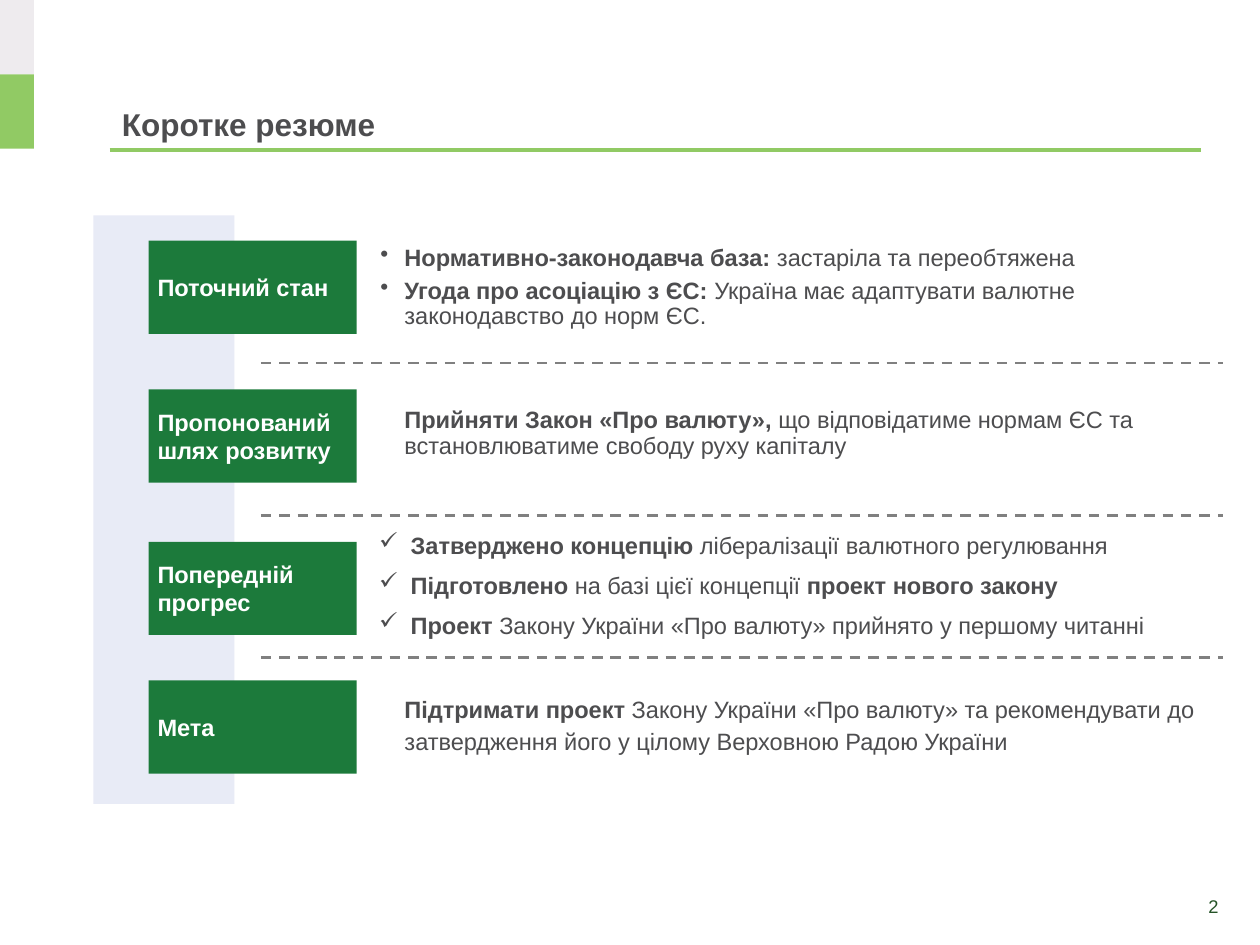
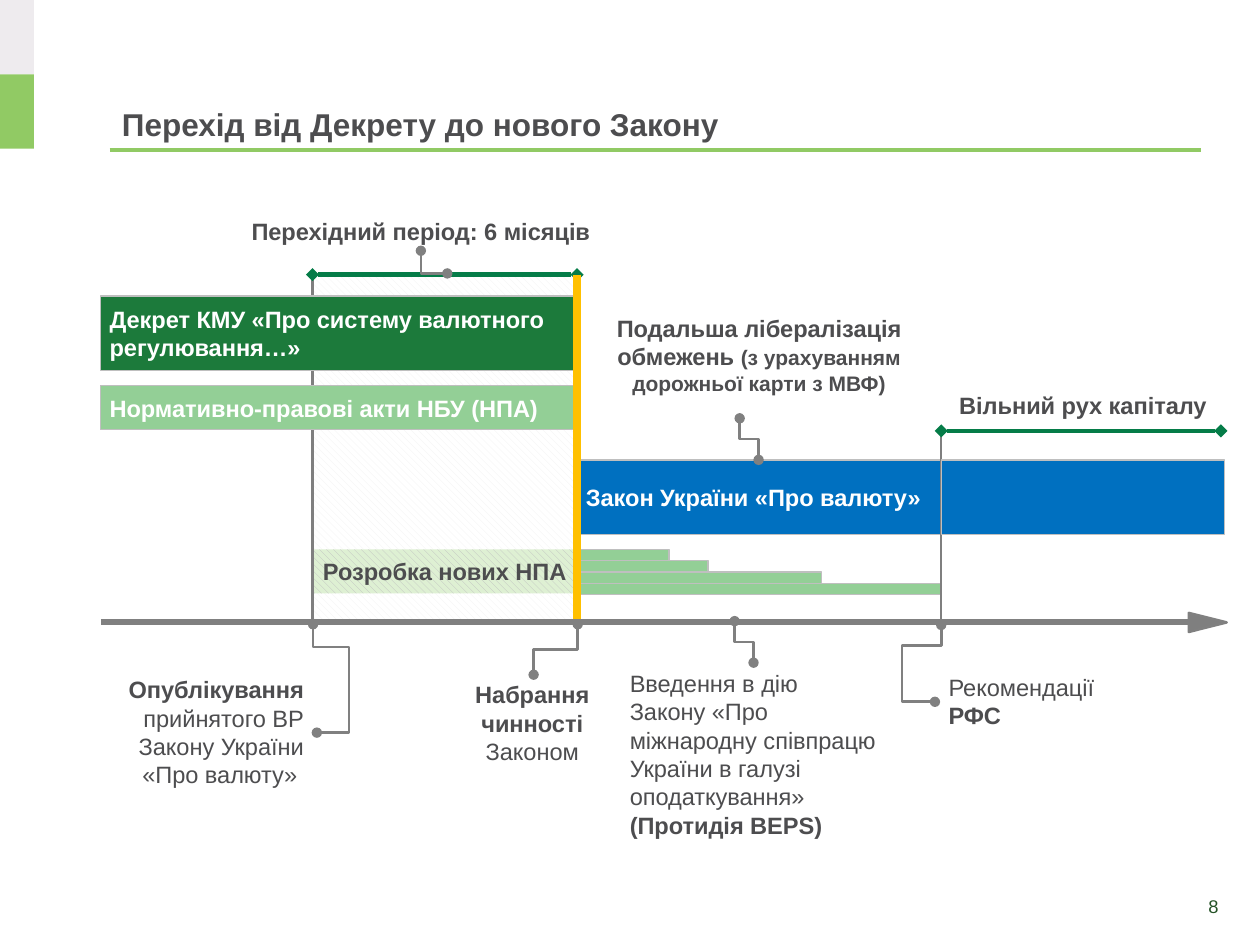
from lxml import etree
from pptx import Presentation
from pptx import util as u
from pptx.dml.color import RGBColor
from pptx.enum import dml, shapes, text
from pptx.oxml import ns


class Theme:
    font = "Arial"
    title, body, note, number = 18, 13.5, 12, 10.5
    ink, white, page_ink = "4D4D4F", "FFFFFF", "255327"
    lime, pale, lilac = "91CA64", "EEEBEE", "E8EBF6"
    green, mint, period = "1C7A3B", "93CF96", "057C48"
    blue, yellow, gray, dark_gray = "0070C0", "FFC000", "808080", "7F7F7F"
    edge, hatch_light, hatch_back = "BFBFBF", "F2F2F2", "DEF0D3"


LEFT, CENTER, RIGHT = text.PP_ALIGN.LEFT, text.PP_ALIGN.CENTER, text.PP_ALIGN.RIGHT
TOP, MIDDLE, BOTTOM = text.MSO_ANCHOR.TOP, text.MSO_ANCHOR.MIDDLE, text.MSO_ANCHOR.BOTTOM
WIDE, SNUG, FLUSH = (0.1, 0.05, 0.1, 0.05), (0.07, 0.04, 0.07, 0.04), (0.07, 0, 0.07, 0.07)
rgb = RGBColor.from_string


def box(slide, at, paragraphs=(), fill=None, hatch=None, edge=None, kind="RECTANGLE",
        insets=WIDE, anchor=TOP, align=LEFT, color=Theme.ink, size=Theme.body,
        spacing=None, bullet=None, indent=0):
    """Box or plain text; words between asterisks are bold."""
    place = [u.Inches(v) for v in at]
    if fill:
        item = slide.shapes.add_shape(shapes.MSO_SHAPE[kind], *place)
        item.shadow.inherit = False
        if hatch:
            item.fill.patterned()
            item.fill.pattern = dml.MSO_PATTERN.WIDE_DOWNWARD_DIAGONAL
            item.fill.fore_color.rgb, item.fill.back_color.rgb = rgb(hatch), rgb(fill)
        else:
            item.fill.solid()
            item.fill.fore_color.rgb = rgb(fill)
        if edge:
            item.line.color.rgb, item.line.width = rgb(edge), u.Pt(0.75)
        else:
            item.line.fill.background()
    else:
        item = slide.shapes.add_textbox(*place)
    frame = item.text_frame
    left, top, right, bottom = [u.Inches(v) for v in insets]
    frame_format = dict(word_wrap=True, vertical_anchor=anchor, margin_left=left,
                        margin_top=top, margin_right=right, margin_bottom=bottom)
    for name, value in frame_format.items():
        setattr(frame, name, value)
    for i, words in enumerate(paragraphs):
        paragraph = frame.add_paragraph() if i else frame.paragraphs[0]
        paragraph.alignment = align
        if spacing:
            paragraph.line_spacing = spacing
        if i:
            paragraph.space_before = u.Pt(4.5)
        if bullet:
            properties = paragraph._p.get_or_add_pPr()
            properties.set("marL", str(u.Inches(indent)))
            properties.set("indent", str(-u.Inches(indent)))
            etree.SubElement(properties, ns.qn("a:buChar"), char=bullet)
        for part, piece in enumerate(words.split("*")):
            if piece:
                run = paragraph.add_run()
                run.text = piece
                run.font.color.rgb = rgb(color)
                font_format = dict(name=Theme.font, size=u.Pt(size), bold=part % 2 == 1)
                for name, value in font_format.items():
                    setattr(run.font, name, value)
    return item


def line(slide, start, end, color, width, ends=None, dash=None, kind="STRAIGHT"):
    item = slide.shapes.add_connector(shapes.MSO_CONNECTOR[kind],
                                      *[u.Inches(v) for v in (*start, *end)])
    item.line.color.rgb, item.line.width = rgb(color), u.Pt(width)
    if dash:
        item.line.dash_style = dash
    if ends:
        for tag in ("a:headEnd", "a:tailEnd"):
            etree.SubElement(item.line._get_or_add_ln(), ns.qn(tag), type=ends)
    etree.SubElement(item._element.spPr, ns.qn("a:effectLst"))
    return item


deck = Presentation()
deck.slide_width, deck.slide_height = u.Inches(10), u.Inches(7.5)

# Shared corner bands, title, rule and page number
pages = []
for title, number in [("Коротке резюме", "2"), ("Перехід від Декрету до нового Закону", "8")]:
    page = deck.slides.add_slide(deck.slide_layouts[6])
    for row, color in enumerate((Theme.pale, Theme.lime)):
        box(page, (0, 0.59 * row, 0.27, 0.59), fill=color)
    line(page, (0.87, 1.19), (9.53, 1.19), Theme.lime, 2.25)
    box(page, (9, 6.99, 0.74, 0.41), [number], insets=SNUG, anchor=MIDDLE, align=RIGHT,
        color=Theme.page_ink, size=Theme.number)
    box(page, (0.87, 0.39, 8.66, 0.79), [f"*{title}*"], anchor=BOTTOM, size=Theme.title)
    pages.append(page)
summary, transition = pages

# Summary: side band, topic labels and their statements
box(summary, (0.74, 1.71, 1.12, 4.67), fill=Theme.lilac)
topics = [
    ("Поточний стан", 1.91, (2.95, 1.95, 6.77, 0.75), 0.9, "•", 0.19,
     ["*Нормативно-законодавча база: *застаріла та переобтяжена",
      "*Угода про асоціацію з ЄС: *Україна має адаптувати валютне законодавство до норм ЄС."]),
    ("Пропонований шлях розвитку", 3.09, (3.14, 3.24, 6.59, 0.48), 0.9, None, 0,
     ["*Прийняти Закон «Про валюту», *що відповідатиме нормам ЄС та "
      "встановлюватиме свободу руху капіталу"]),
    ("Попередній прогрес", 4.3, (2.94, 4.18, 6.77, 0.98), 1.14, "✓", 0.25,
     ["*Затверджено концепцію *лібералізації валютного регулювання",
      "*Підготовлено *на базі цієї концепції *проект нового закону*",
      "*Проект *Закону України «Про валюту» прийнято у першому читанні"]),
    ("Мета", 5.4, (3.14, 5.48, 6.59, 0.59), 1.14, None, 0,
     ["*Підтримати проект *Закону України «Про валюту» та рекомендувати до "
      "затвердження його у цілому Верховною Радою України"]),
]
for topic, top, place, spacing, bullet, indent, statements in topics:
    box(summary, (1.18, top, 1.65, 0.74), [f"*{topic}*"], fill=Theme.green, insets=SNUG,
        anchor=MIDDLE, color=Theme.white)
    box(summary, place, statements, insets=FLUSH, spacing=spacing, bullet=bullet, indent=indent)
for y in (2.88, 4.09, 5.22):
    line(summary, (2.07, y), (9.71, y), Theme.gray, 1.5, dash=dml.MSO_LINE.DASH)

# Transition: key dates on the time axis
START, PUBLISHED, IN_FORCE, FREE_FLOW = 0.8, 2.48, 4.58, 7.47
PERIOD_Y, FREE_Y, AXIS_Y, MARK_END = 2.18, 3.42, 4.94, 4.92
bar = dict(edge=Theme.edge, insets=SNUG, anchor=MIDDLE, color=Theme.white)

# Transition period background, new law and new regulations
box(transition, (PUBLISHED, 2.19, 2.09, 2.73), fill=Theme.white, hatch=Theme.hatch_light)
box(transition, (IN_FORCE, 3.65, 2.89, 0.59), ["*Закон України «Про валюту»*"],
    fill=Theme.blue, **bar)
for step, width in enumerate((0.73, 1.04, 1.94, 2.89)):
    box(transition, (IN_FORCE, 4.36 + 0.09 * step, width, 0.09), fill=Theme.mint, edge=Theme.edge)
box(transition, (PUBLISHED, 4.36, 2.1, 0.35), ["*Розробка нових НПА*"], fill=Theme.hatch_back,
    hatch=Theme.edge, insets=SNUG, anchor=MIDDLE, align=CENTER)

# Rules in force today and the date marks
line(transition, (PUBLISHED, PERIOD_Y), (PUBLISHED, MARK_END), Theme.dark_gray, 1.5)
box(transition, (START, 3.06, 3.78, 0.35), ["*Нормативно-правові акти НБУ (НПА)*"],
    fill=Theme.mint, **bar)
box(transition, (START, 2.35, 3.78, 0.59), ["*Декрет КМУ «Про систему валютного регулювання…»*"],
    fill=Theme.green, **bar)
line(transition, (FREE_FLOW, FREE_Y), (FREE_FLOW, MARK_END), Theme.dark_gray, 1.5)
line(transition, (PUBLISHED, PERIOD_Y), (IN_FORCE, PERIOD_Y), Theme.period, 2.5, "diamond")
line(transition, (IN_FORCE, PERIOD_Y), (IN_FORCE, MARK_END), Theme.yellow, 4.5)
line(transition, (FREE_FLOW, FREE_Y), (9.69, FREE_Y), Theme.period, 2.5, "diamond")

# Time axis and the last stretch of the law
line(transition, (START, AXIS_Y), (9.45, AXIS_Y), Theme.gray, 3.5)
arrow = box(transition, (9.51, 4.79, 0.15, 0.3), fill=Theme.dark_gray, edge=Theme.gray,
            kind="ISOSCELES_TRIANGLE")
arrow.rotation, arrow.line.width = 90, u.Pt(1.5)
box(transition, (FREE_FLOW, 3.65, 2.25, 0.59), fill=Theme.blue, edge=Theme.edge)

# Callout texts
callouts = [
    ((1.45, 1.67, 3.78, 0.33), CENTER, "*Перехідний період: 6 місяців*"),
    ((4.73, 2.44, 2.59, 0.76), CENTER,
     "*Подальша лібералізація обмежень **(з урахуванням дорожньої карти з МВФ)*"),
    ((7.3, 3.05, 2.59, 0.33), CENTER, "*Вільний рух капіталу*"),
    ((0.8, 5.31, 1.71, 1.01), RIGHT,
     "*Опублікування* прийнятого ВР Закону України «Про валюту» "),
    ((3.51, 5.35, 1.43, 0.78), CENTER, "*Набрання чинності *Законом"),
    ((4.9, 5.26, 2.16, 1.46), LEFT,
     "Введення в дію Закону «Про міжнародну співпрацю України в галузі "
     "оподаткування» *(Протидія BEPS)*"),
    ((7.43, 5.29, 1.38, 0.56), LEFT, "Рекомендації *РФС*"),
]
for place, align, words in callouts:
    callout = box(transition, place, [words], align=align)
    for run in callout.text_frame.paragraphs[0].runs:
        if run.text.startswith("(з"):
            run.font.size = u.Pt(Theme.note)

# Callout leaders: frame before turning, turn, mirrored, bends, bend positions
leaders = [
    ((3.34, 1.99, 0.21, 0.18), 180, False, 2, ()),
    ((5.78, 3.41, 0.33, 0.15), 270, True, 3, (0.5,)),
    ((2.07, 5.37, 0.86, 0.03), 270, True, 4, (0.21, 9.53)),
    ((4.21, 4.98, 0.4, 0.35), 90, False, 3, (0.5,)),
    ((5.74, 5.02, 0.33, 0.15), 270, True, 3, (0.5,)),
    ((7.14, 5.24, 0.61, 0.05), 90, False, 4, (0.27, 6.21)),
]
for (left, top, width, height), turn, mirrored, bends, positions in leaders:
    leader = line(transition, (left, top), (left + width, top + height), Theme.gray, 1.5,
                  "oval", kind="ELBOW")
    outline = leader._element.spPr
    frame = outline.find(ns.qn("a:xfrm"))
    frame.set("rot", str(turn * 60000))
    if mirrored:
        frame.set("flipH", "1")
    geometry = outline.find(ns.qn("a:prstGeom"))
    geometry.set("prst", f"bentConnector{bends}")
    guides = geometry.find(ns.qn("a:avLst"))
    for i, position in enumerate(positions, 1):
        etree.SubElement(guides, ns.qn("a:gd"), name=f"adj{i}",
                         fmla=f"val {round(position * 100000)}")

deck.save("out.pptx")
